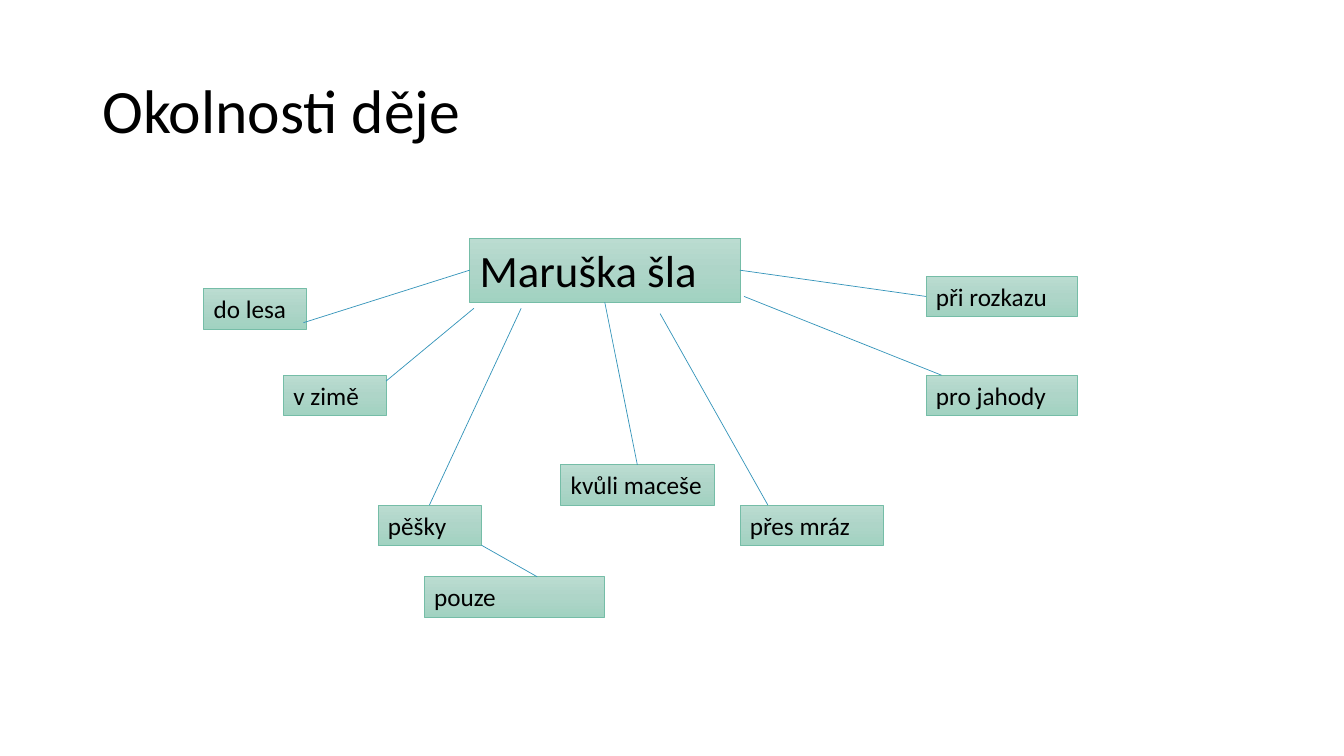
from copy import deepcopy

from pptx import Presentation
from pptx import util as u
from pptx.dml.color import RGBColor
from pptx.enum import shapes, text
from pptx.oxml import ns, xmlchemy

Pt = u.Pt
FONT = "Calibri"
GRADIENT = ((0, "BBDCD1"), (0.5, "AED5C8"), (1, "A1D2C1"))
BOX_LINE, LINK_LINE, INK = "75BDA7", "3494BA", "000000"
LEAF_HEIGHT = 29
HUB = ("Maruška šla", 190, 0, 193, 46)

# Leaf: text, left, top, width
LEAVES = (
    ("do lesa", 0, 36, 73.5),
    ("v zimě", 57, 98, 73.5),
    ("pěšky", 124.5, 190.75, 73.5),
    ("kvůli maceše", 255, 162, 109.5),
    ("přes mráz", 383, 190.75, 102.25),
    ("pro jahody", 516, 98, 108),
    ("při rozkazu", 516, 27.25, 108),
    ("pouze", 157.5, 242, 129),
)

# Link: from, start, to, end; an end is a side number or a free point
LINKS = (
    ("do lesa", (71.25, 60.5), "Maruška šla", 1),
    ("v zimě", (130.25, 102.25), "Maruška šla", (193, 50.25)),
    ("pěšky", 0, "Maruška šla", (226.75, 50.25)),
    ("kvůli maceše", 0, "Maruška šla", 2),
    ("přes mráz", (403, 190.75), "Maruška šla", (326, 54)),
    ("pro jahody", (527, 98), "Maruška šla", (386, 41.75)),
    ("při rozkazu", 1, "Maruška šla", 3),
    ("pěšky", (198.5, 219.5), "pouze", (238.25, 242)),
)


def rgb(value):
    return RGBColor.from_string(value)


def set_text(tf, words, size, **frame):
    for name, value in {"word_wrap": True, **frame}.items():
        setattr(tf, name, value)
    p = tf.paragraphs[0]
    p.alignment = text.PP_ALIGN.LEFT
    r = p.add_run()
    r.text = words
    for name, value in {"name": FONT, "size": Pt(size)}.items():
        setattr(r.font, name, value)
    r.font.color.rgb = rgb(INK)
    return p


def set_line(line, color):
    line.color.rgb = rgb(color)
    line.width = Pt(0.5)


def set_gradient(sp):
    sp.fill.gradient()
    sp.fill.gradient_angle = 270
    stops = sp._element.spPr.find(".//" + ns.qn("a:gsLst"))
    stops.insert(1, deepcopy(stops[0]))
    for stop, (position, color) in zip(sp.fill.gradient_stops, GRADIENT):
        stop.position = position
        stop.color.rgb = rgb(color)


def add_title(s, left, top, width, height):
    sp = s.shapes.add_textbox(Pt(left), Pt(top), Pt(width), Pt(height))
    p = set_text(sp.text_frame, "Okolnosti děje", 44,
                 vertical_anchor=text.MSO_ANCHOR.MIDDLE)
    p.line_spacing = 0.9


def add_box(s, words, left, top, width, height, size):
    sp = s.shapes.add_shape(shapes.MSO_SHAPE.RECTANGLE,
                            Pt(left), Pt(top), Pt(width), Pt(height))
    sp.shadow.inherit = False
    set_gradient(sp)
    set_line(sp.line, BOX_LINE)
    set_text(sp.text_frame, words, size, vertical_anchor=text.MSO_ANCHOR.TOP,
             auto_size=text.MSO_AUTO_SIZE.SHAPE_TO_FIT_TEXT)
    return sp


def add_link(s, left, top, source, start, target, end):
    ends = [(0, 0) if isinstance(e, int) else e for e in (start, end)]
    (x1, y1), (x2, y2) = ends
    link = s.shapes.add_connector(shapes.MSO_CONNECTOR.STRAIGHT,
                                  Pt(left + x1), Pt(top + y1),
                                  Pt(left + x2), Pt(top + y2))
    if isinstance(start, int):
        link.begin_connect(source, start)
    if isinstance(end, int):
        link.end_connect(target, end)
    set_line(link.line, LINK_LINE)
    link._element.spPr.append(xmlchemy.OxmlElement("a:effectLst"))


def add_mind_map(s, left, top):
    # Central phrase and its circumstances
    words, x, y, width, height = HUB
    boxes = {words: add_box(s, words, left + x, top + y, width, height, 32)}
    for words, x, y, width in LEAVES:
        boxes[words] = add_box(s, words, left + x, top + y, width, LEAF_HEIGHT, 18)
    # Links between the boxes
    for source, start, target, end in LINKS:
        add_link(s, left, top, boxes[source], start, boxes[target], end)


def main():
    prs = Presentation()
    prs.slide_width, prs.slide_height = Pt(960), Pt(540)
    s = prs.slides.add_slide(prs.slide_layouts[6])
    add_title(s, 66, 28.75, 828, 104.5)
    add_mind_map(s, 145.5, 170)
    prs.save("out.pptx")


if __name__ == "__main__":
    main()
